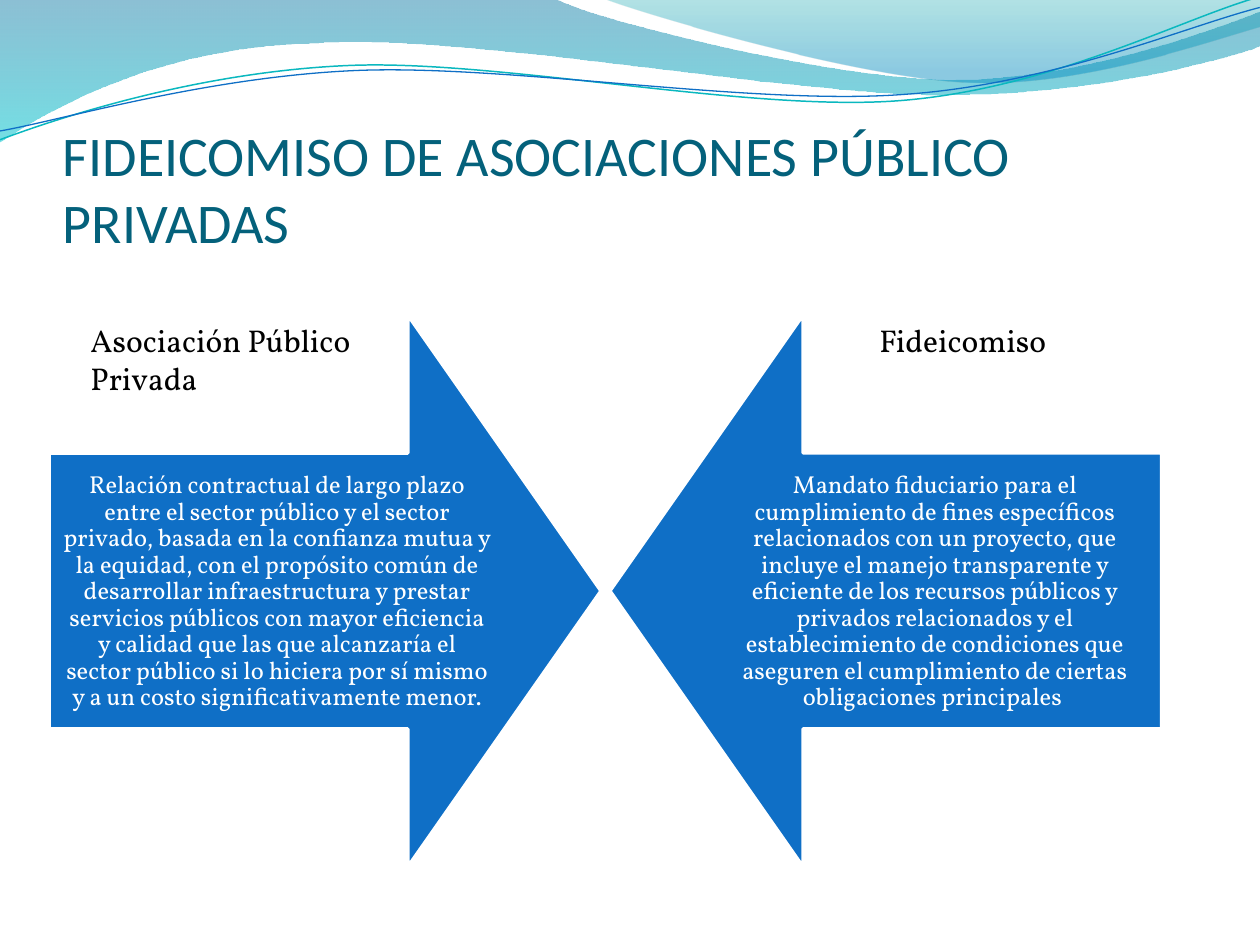
import math
import pptx
import pptx.util
import pptx.dml.color
import pptx.enum.shapes
import pptx.enum.text
import pptx.oxml
import pptx.oxml.ns
from dataclasses import dataclass, field

Pt = pptx.util.Pt
qn = pptx.oxml.ns.qn
NS = pptx.oxml.ns.nsdecls("a")
ANCHOR = pptx.enum.text.MSO_ANCHOR
ALIGN = pptx.enum.text.PP_ALIGN

# The slide is a grid of 10 columns by 7.5 rows
COLS, ROWS = 10, 7.5
WIDTH, HEIGHT = pptx.util.Inches(10), pptx.util.Inches(7.5)
COLORS = {
    "title": "04617B", "blue": "0F6FC6", "teal": "0AB8BF",
    "black": "000000", "white": "FFFFFF",
    "deep": "0074A1", "aqua": "00C6CF", "sea": "00A1A9", "sky": "008BBF",
}


@dataclass
class Wave:
    """Start point, then segments: 2 numbers for a line, 6 for a Bézier curve."""
    start: tuple
    segments: list
    stops: list = field(default_factory=list)  # position, colour, opacity %
    line: tuple = ()  # colour, width
    tilt: float = 0  # degrees


@dataclass
class Label:
    box: tuple  # column, row, columns, rows
    text: str
    size: float
    font: str
    color: str
    insets: tuple = (0.1, 0.05, 0.1, 0.05)
    frame: dict = field(default_factory=dict)
    para: dict = field(default_factory=dict)


@dataclass
class Side:
    column: float
    rotation: int
    text_shift: float
    text: str


def col(n: float) -> int:
    return round(WIDTH * n / COLS)


def row(n: float) -> int:
    return round(HEIGHT * n / ROWS)


def place(box: tuple) -> tuple:
    return col(box[0]), row(box[1]), col(box[2]), row(box[3])


def rgb(name: str) -> pptx.dml.color.RGBColor:
    return pptx.dml.color.RGBColor.from_string(COLORS[name])


def set_all(obj, values: dict) -> None:
    for name, value in values.items():
        setattr(obj, name, value)


def level(points: list, tilt: float) -> list:
    """Turn points back by the tilt about the middle of their extent."""
    cx, cy = ((min(axis) + max(axis)) / 2 for axis in zip(*points))
    cos, sin = math.cos(math.radians(-tilt)), math.sin(math.radians(-tilt))
    return [(cx + (x - cx) * cos - (y - cy) * sin,
             cy + (x - cx) * sin + (y - cy) * cos) for x, y in points]


def bend(sp, segments: list) -> None:
    """Join each three steps of a curved segment into one Bézier curve."""
    steps = iter(list(sp.element.iter(qn("a:lnTo"))))
    for seg in segments:
        group = [next(steps) for _ in range(len(seg) // 2)]
        if len(group) == 3:
            curve = pptx.oxml.parse_xml(f"<a:cubicBezTo {NS}/>")
            group[0].addprevious(curve)
            for step in group:
                curve.append(step[0])
                step.getparent().remove(step)


def draw_wave(s, wave: Wave) -> None:
    points = [wave.start] + [seg[i:i + 2] for seg in wave.segments
                             for i in range(0, len(seg), 2)]
    points = [(col(x), row(y)) for x, y in level(points, wave.tilt)]
    builder = s.shapes.build_freeform(*points[0])
    builder.add_line_segments(points[1:], close=bool(wave.stops))
    sp = builder.convert_to_shape()
    bend(sp, wave.segments)
    sp.rotation = wave.tilt
    sp.shadow.inherit = False
    if wave.line:
        sp.fill.background()
        sp.line.color.rgb, sp.line.width = rgb(wave.line[0]), Pt(wave.line[1])
        return
    sp.line.fill.background()
    sp.fill.gradient()
    sp.fill.gradient_angle = 270
    for stop, (position, color, _) in zip(sp.fill.gradient_stops, wave.stops):
        stop.position, stop.color.rgb = position, rgb(color)
    # Opacity of each stop
    colors = sp.element.spPr.iter(qn("a:srgbClr"))
    for clr, (_, _, opacity) in zip(colors, wave.stops):
        clr.append(pptx.oxml.parse_xml(f'<a:alpha {NS} val="{opacity * 1000}"/>'))


def draw_label(s, label: Label) -> None:
    tf = s.shapes.add_textbox(*place(label.box)).text_frame
    sides = ("margin_left", "margin_top", "margin_right", "margin_bottom")
    margins = {side: col(n) for side, n in zip(sides, label.insets)}
    set_all(tf, {"word_wrap": True, **margins, **label.frame})
    p = tf.paragraphs[0]
    set_all(p, label.para)
    r = p.add_run()
    r.text = label.text
    set_all(r.font, {"size": Pt(label.size), "name": label.font})
    r.font.color.rgb = rgb(label.color)


def draw_side(s, side: Side) -> None:
    sp = s.shapes.add_shape(pptx.enum.shapes.MSO_SHAPE.DOWN_ARROW,
                            *place((side.column, 2.5, 4.38, 4.38)))
    sp.rotation = side.rotation
    sp.adjustments[0], sp.adjustments[1] = 0.5, 0.35
    sp.shadow.inherit = False
    sp.fill.solid()
    sp.fill.fore_color.rgb = rgb("blue")
    sp.line.color.rgb, sp.line.width = rgb("white"), Pt(2)
    draw_label(s, Label((side.column + side.text_shift, 3.6, 3.62, 2.19), side.text,
                        14, "Vollkorn", "white", (0.11,) * 4,
                        {"vertical_anchor": ANCHOR.MIDDLE},
                        {"alignment": ALIGN.CENTER, "line_spacing": 0.9,
                         "space_after": Pt(6)}))


WAVES = [
    Wave((0, 0), [(4.4, -0.01), (4.76, 0.17, 6.64, 0.63, 7.58, 0.63),
                  (8.53, 0.63, 9.58, 0.26, 10, 0.09), (10.01, 0.36),
                  (9.83, 0.44, 8.7, 0.76, 7.46, 0.75),
                  (6.22, 0.75, 3.82, 0.28, 2.57, 0.34),
                  (1.29, 0.36, 0.46, 0.83, -0.01, 1.13), (0, 0)],
         stops=[(0, "deep", 45), (1, "aqua", 55)]),
    Wave((4.79, -0.01), [(5.09, 0.11, 6.82, 0.62, 7.69, 0.65),
                         (8.56, 0.69, 9.61, 0.32, 10, 0.21), (10, 0), (4.79, -0.01)],
         stops=[(0, "sea", 30), (0.8, "sky", 45)]),
    Wave((0, 1.11), [(0.48, 0.93, 1.58, 0.57, 2.77, 0.52),
                     (3.95, 0.47, 5.93, 0.89, 7.13, 0.8),
                     (8.33, 0.71, 9.38, 0.15, 9.98, -0.02)],
         line=("teal", 0.85), tilt=-2.7),
    Wave((0, 1.04), [(0.47, 0.96, 1.64, 0.61, 2.83, 0.56),
                     (4.03, 0.51, 5.97, 0.84, 7.17, 0.75),
                     (8.36, 0.67, 9.41, 0.21, 10, 0.06)],
         line=("blue", 0.75), tilt=-2.7),
]
LABELS = [
    Label((0.5, 0.55, 9, 1.47), "FIDEICOMISO DE ASOCIACIONES PÚBLICO PRIVADAS",
          32, "Calibri", "title", (0, 0.05, 0, 0), {"vertical_anchor": ANCHOR.BOTTOM}),
    Label((0.62, 2.5, 2.5, 0.71), "Asociación Público Privada", 18, "Vollkorn", "black"),
    Label((6.88, 2.5, 2.42, 0.4), "Fideicomiso", 18, "Vollkorn", "black"),
]
SIDES = [
    Side(0.39, 270, 0,
         "Relación contractual de largo plazo entre el sector público y el sector privado, "
         "basada en la confianza mutua y la equidad, con el propósito común de desarrollar "
         "infraestructura y prestar servicios públicos con mayor eficiencia y calidad que las "
         "que alcanzaría el sector público si lo hiciera por sí mismo y a un costo "
         "significativamente menor."),
    Side(4.84, 90, 0.77,
         "Mandato fiduciario para el cumplimiento de fines específicos relacionados con un "
         "proyecto, que incluye el manejo transparente y eficiente de los recursos públicos y "
         "privados relacionados y el establecimiento de condiciones que aseguren el "
         "cumplimiento de ciertas obligaciones principales "),
]


def main() -> None:
    prs = pptx.Presentation()
    prs.slide_width, prs.slide_height = WIDTH, HEIGHT
    s = prs.slides.add_slide(prs.slide_layouts[6])
    # Waves along the top
    for wave in WAVES:
        draw_wave(s, wave)
    # Title and headings
    for label in LABELS:
        draw_label(s, label)
    # Facing arrows with their definitions
    for side in SIDES:
        draw_side(s, side)
    prs.save("out.pptx")


if __name__ == "__main__":
    main()
